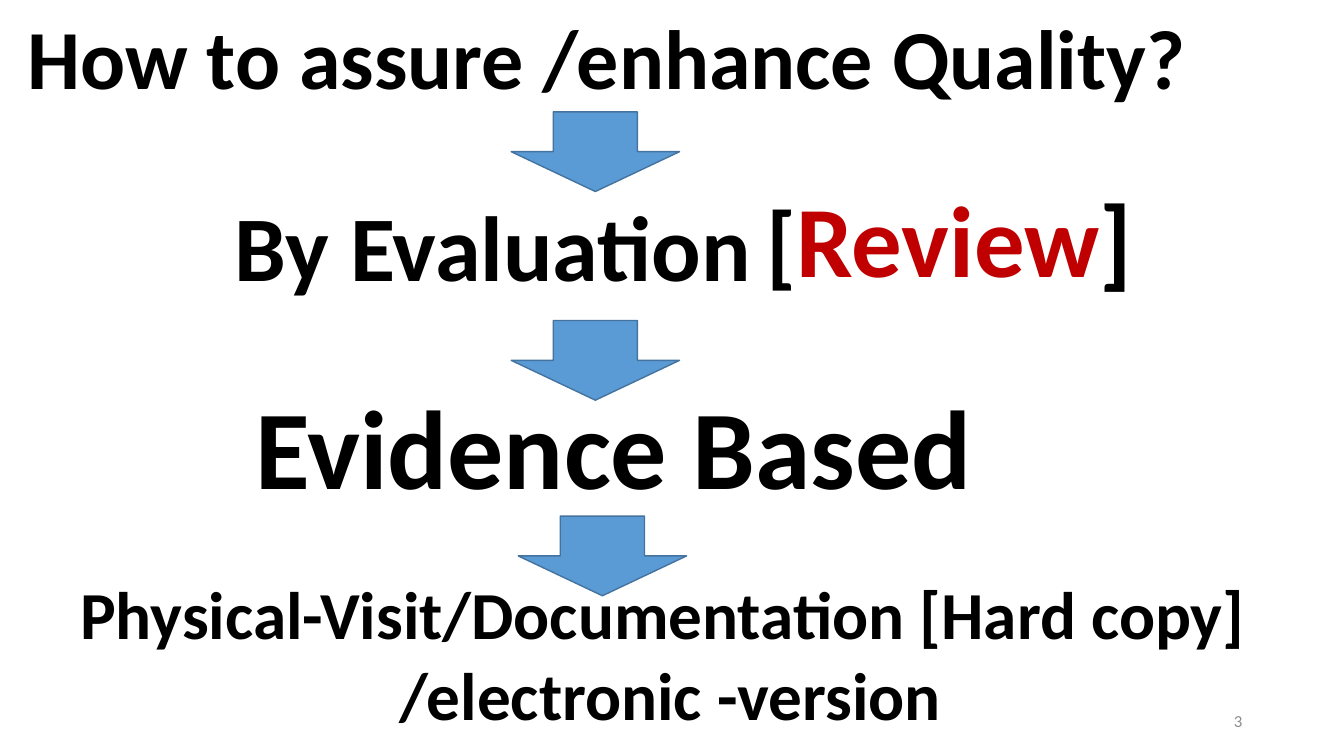
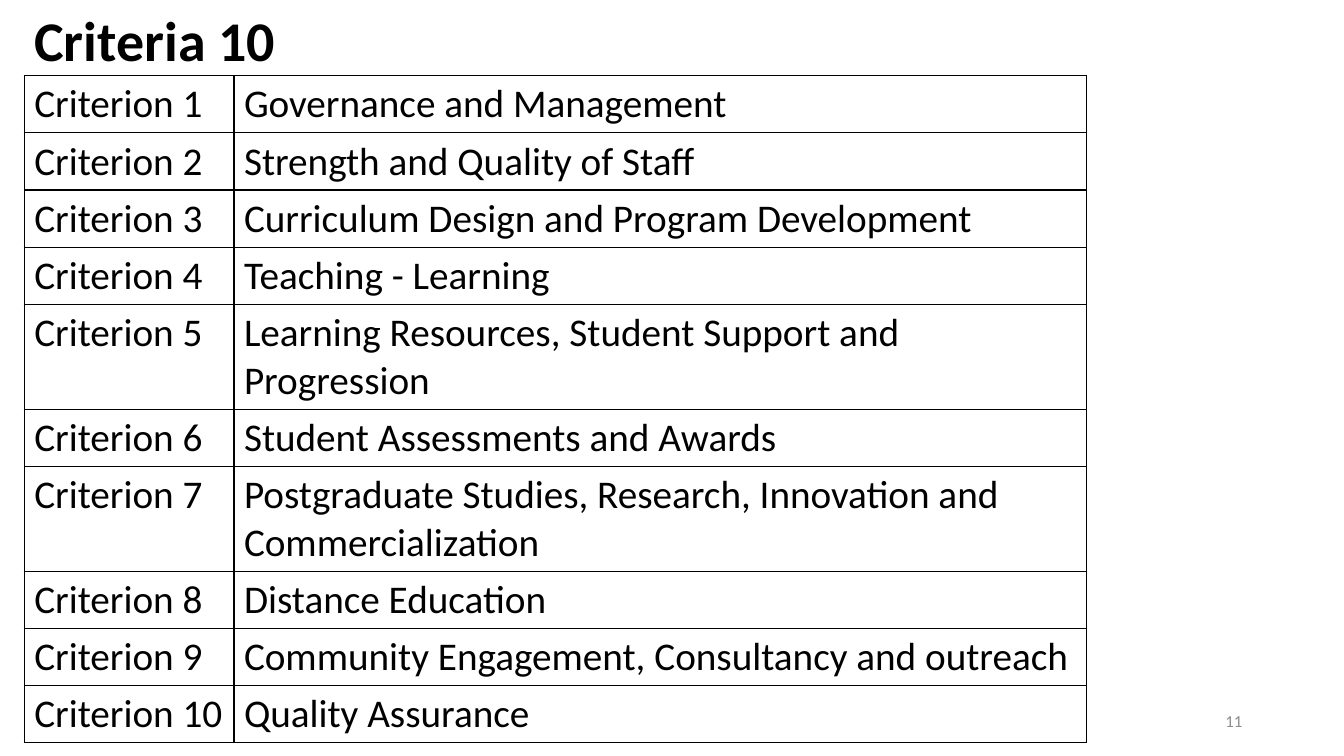
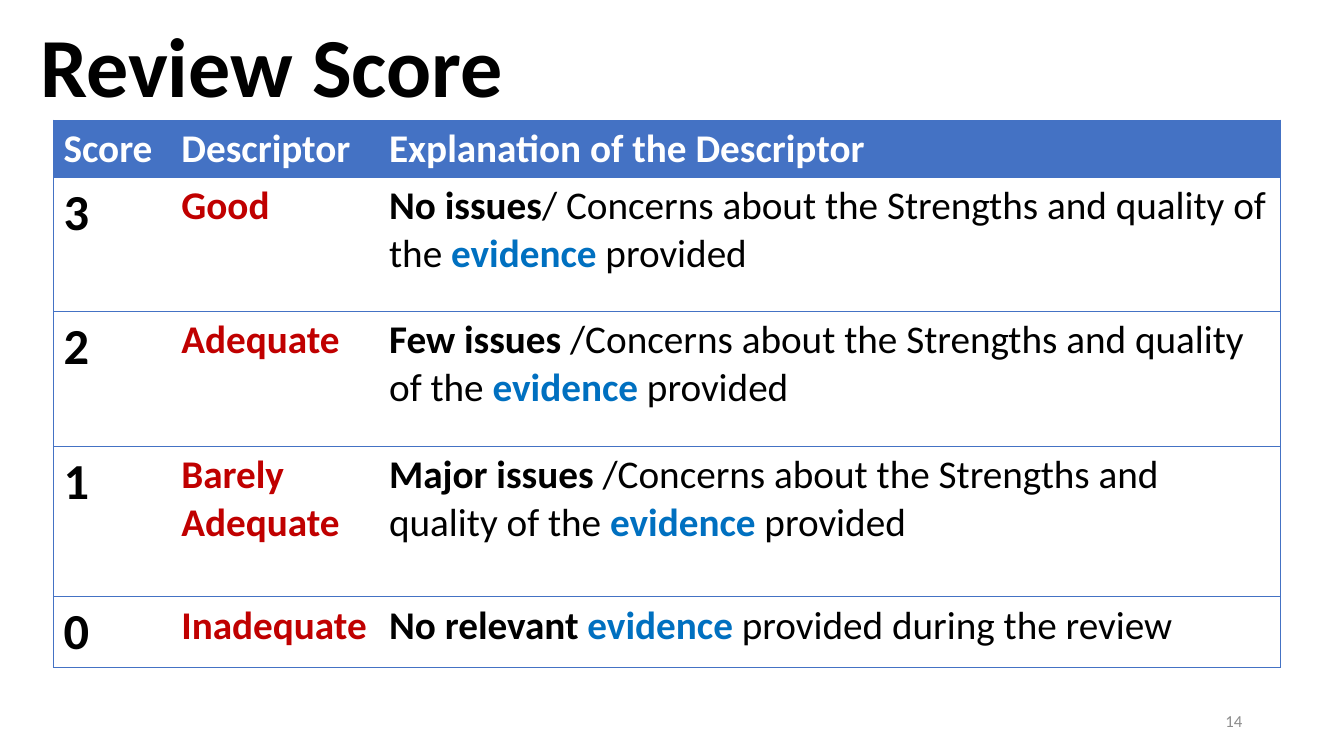
"""Build three slides on quality review: approach, criteria and scores."""
from lxml.etree import SubElement
from pptx import Presentation
from pptx.dml.color import RGBColor
from pptx.enum.shapes import MSO_SHAPE as Shape
from pptx.enum.text import MSO_ANCHOR as Anchor, MSO_AUTO_SIZE as AutoSize, PP_ALIGN as Align
from pptx.oxml.ns import qn
from pptx.util import Emu, Pt

PX = 9144
FONT = "Calibri"
BLACK, WHITE, GREY = "000000", "FFFFFF", "8C8C8C"
RED, BLUE, HEADER = "C00000", "0070C0", "4472C4"
ARROW_FILL, ARROW_LINE = "5B9BD5", "43739E"
TITLE_ONLY = 5
NUMBER_BOX = (942, 695, 300, 40)

TITLES = [
    ("How to assure /enhance Quality?", (17, 0, 1282, 111), 60, "3"),
    ("Criteria 10", (24, 0, 942, 77), 40, "11"),
    ("Review Score", (30, 8, 509, 111), 60, "14"),
]

STATEMENTS = [
    ((167, 183, 644, 121), [[("By Evaluation", 66, BLACK, True)]]),
    ((136, 370, 946, 145), [[("Evidence Based", 80, BLACK, True)]]),
    ((49, 563, 1232, 172), [
        [("Physical-Visit/Documentation [Hard copy] ", 48, BLACK, True)],
        [("/electronic -version", 48, BLACK, True)],
    ]),
    ((736, 170, 411, 131), [
        [("[", 66, BLACK, True), ("Review", 72, RED, True), ("]", 72, BLACK, True)],
    ]),
]
ARROW_SIZE = (167, 79)
ARROW_CORNERS = [(507, 111), (507, 318), (514, 512)]

CRITERIA = [
    "Governance and Management",
    "Strength and Quality of Staff",
    "Curriculum Design and Program Development",
    "Teaching - Learning",
    "Learning Resources, Student Support and Progression",
    "Student Assessments and Awards",
    "Postgraduate Studies, Research, Innovation and Commercialization",
    "Distance Education",
    "Community Engagement, Consultancy and outreach",
    "Quality Assurance",
]
CRITERIA_CORNER, CRITERIA_COLUMNS = (24, 75), [208, 846]
ONE_LINE, TWO_LINES, LONG_TEXT = 56, 104, 48

SCORE_HEADINGS = ["Score", "Descriptor", "Explanation of the Descriptor"]
CONCERNS = "Concerns about the Strengths and quality of the "
SCORES = [
    ("3", "Good", "No issues", "/ " + CONCERNS, " provided"),
    ("2", "Adequate", "Few issues ", "/" + CONCERNS, " provided"),
    ("1", "Barely Adequate", "Major issues ", "/" + CONCERNS, " provided"),
    ("0", "Inadequate", "No relevant ", "", " provided during the review"),
]
SCORE_CORNER, SCORE_COLUMNS = (53, 119), [117, 206, 894]
SCORE_HEIGHTS = [57, 133, 134, 149, 70]


def px(*lengths):
    return [Emu(length * PX) for length in lengths]


def colour(value):
    return RGBColor.from_string(value)


def apply(target, values):
    for name, value in values.items():
        setattr(target, name, value)


def write(frame, paragraphs, alignment=Align.LEFT):
    for index, runs in enumerate(paragraphs):
        paragraph = frame.add_paragraph() if index else frame.paragraphs[0]
        paragraph.alignment = alignment
        for text, size, ink, bold in runs:
            run = paragraph.add_run()
            run.text = text
            apply(run.font, {"name": FONT, "size": Pt(size), "bold": bold})
            run.font.color.rgb = colour(ink)


def add_text(slide, box, paragraphs, alignment, anchor=Anchor.TOP):
    frame = slide.shapes.add_textbox(*px(*box)).text_frame
    apply(frame, {"word_wrap": True, "vertical_anchor": anchor})
    write(frame, paragraphs, alignment)


def add_titled_slide(presentation, title, box, size, number):
    slide = presentation.slides.add_slide(presentation.slide_layouts[TITLE_ONLY])
    shape = slide.shapes.title
    apply(shape, dict(zip(("left", "top", "width", "height"), px(*box))))
    apply(shape.text_frame, {"word_wrap": True, "auto_size": AutoSize.NONE,
                             "vertical_anchor": Anchor.TOP})
    write(shape.text_frame, [[(title, size, BLACK, True)]])
    add_text(slide, NUMBER_BOX, [[(number, 12, GREY, False)]], Align.RIGHT, Anchor.MIDDLE)
    return slide


def set_borders(cell, ink, width, sides):
    properties = cell._tc.get_or_add_tcPr()
    for index, side in enumerate("LRTB"):
        line = SubElement(properties, qn(f"a:ln{side}"), w=str(Pt(width)))
        properties.insert(index, line)
        if side in sides:
            fill = SubElement(line, qn("a:solidFill"))
            SubElement(fill, qn("a:srgbClr"), val=ink)
        else:
            SubElement(line, qn("a:noFill"))


def add_grid(slide, corner, columns, heights, rows):
    box = px(*corner, sum(columns), sum(heights))
    table = slide.shapes.add_table(len(rows), len(columns), *box).table
    apply(table, {"first_row": False, "horz_banding": False})
    for column, width in zip(table.columns, px(*columns)):
        column.width = width
    for row, height, contents in zip(table.rows, px(*heights), rows):
        row.height = height
        for cell, runs in zip(row.cells, contents):
            cell.fill.background()
            write(cell.text_frame, [runs])
    return table


def fill_approach(slide):
    for box, paragraphs in STATEMENTS:
        add_text(slide, box, paragraphs, Align.CENTER)
    for corner in ARROW_CORNERS:
        arrow = slide.shapes.add_shape(Shape.DOWN_ARROW, *px(*corner, *ARROW_SIZE))
        arrow.shadow.inherit = False
        arrow.fill.solid()
        arrow.fill.fore_color.rgb = colour(ARROW_FILL)
        arrow.line.color.rgb = colour(ARROW_LINE)
        arrow.line.width = Pt(1)


def fill_criteria(slide):
    rows = [[[(text, 28, BLACK, False)] for text in (f"Criterion {number}", criterion)]
            for number, criterion in enumerate(CRITERIA, 1)]
    heights = [TWO_LINES if len(text) > LONG_TEXT else ONE_LINE for text in CRITERIA]
    table = add_grid(slide, CRITERIA_CORNER, CRITERIA_COLUMNS, heights, rows)
    for cell in table.iter_cells():
        set_borders(cell, BLACK, 1, "LRTB")


def fill_scores(slide):
    rows = [[[(heading, 28, WHITE, True)] for heading in SCORE_HEADINGS]]
    for score, descriptor, issue, concern, ending in SCORES:
        explanation = [(issue, 28, BLACK, True), (concern, 28, BLACK, False),
                       ("evidence", 28, BLUE, True), (ending, 28, BLACK, False)]
        rows.append([[(score, 36, BLACK, True)], [(descriptor, 28, RED, True)],
                     [run for run in explanation if run[0]]])
    table = add_grid(slide, SCORE_CORNER, SCORE_COLUMNS, SCORE_HEIGHTS, rows)
    for row in table.rows:
        for cell, sides in zip(row.cells, ("LTB", "TB", "RTB")):
            set_borders(cell, HEADER, 0.5, sides)
    for cell in table.rows[0].cells:
        cell.fill.solid()
        cell.fill.fore_color.rgb = colour(HEADER)


def main():
    presentation = Presentation()
    width, height = px(1333, 750)
    apply(presentation, {"slide_width": width, "slide_height": height})
    for title, fill in zip(TITLES, (fill_approach, fill_criteria, fill_scores)):
        fill(add_titled_slide(presentation, *title))
    presentation.save("out.pptx")


if __name__ == "__main__":
    main()
